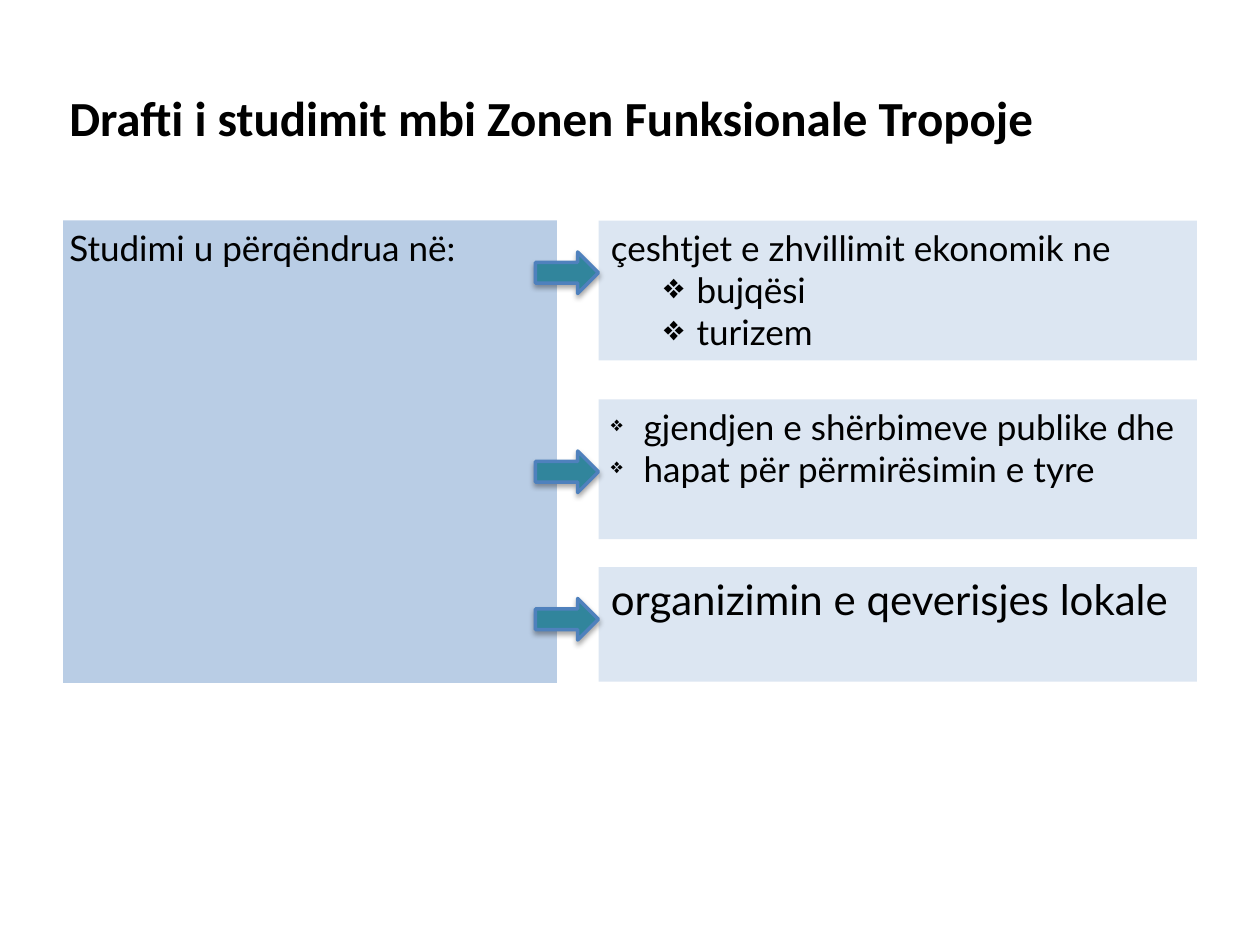
from dataclasses import dataclass

from lxml import etree
from pptx import Presentation
from pptx.dml.color import RGBColor
from pptx.enum.shapes import MSO_SHAPE
from pptx.enum.text import MSO_ANCHOR, MSO_AUTO_SIZE, PP_ALIGN
from pptx.oxml.ns import qn
from pptx.util import Inches, Pt

RECTANGLE = MSO_SHAPE.RECTANGLE
RIGHT_ARROW = MSO_SHAPE.RIGHT_ARROW
TOP, MIDDLE = MSO_ANCHOR.TOP, MSO_ANCHOR.MIDDLE
FIXED, GROW = MSO_AUTO_SIZE.NONE, MSO_AUTO_SIZE.SHAPE_TO_FIT_TEXT
LEFT, JUSTIFY = PP_ALIGN.LEFT, PP_ALIGN.JUSTIFY

COLORS = {
    "text": "000000",
    "focus": "B9CDE5",
    "topic": "DCE6F2",
    "arrow": "31859C",
    "arrow_line": "4F81BD",
}
HANGING = 0.26
TOPIC_LEFT, TOPIC_WIDTH = 4.75, 4.75
ARROW_WIDTH, ARROW_HEIGHT = 0.5, 0.33


@dataclass
class Line:
    text: str
    size: int = 20
    align: PP_ALIGN = LEFT
    font: str = "Lato"
    bold: bool = False
    level: int = 0
    indent: float = 0
    bullet_percent: int = 0


@dataclass
class Topic:
    top: float
    height: float
    arrow_top: float
    lines: list[Line]


TOPICS = [
    Topic(1.75, 1.11, 2, [
        Line("çeshtjet e zhvillimit ekonomik ne"),
        Line("bujqësi", level=1, indent=0.68, bullet_percent=100),
        Line("turizem", level=1, indent=0.68, bullet_percent=100),
    ]),
    Topic(3.17, 1.11, 3.58, [
        Line("gjendjen e shërbimeve publike dhe", indent=HANGING, bullet_percent=60),
        Line("hapat për përmirësimin e tyre", indent=HANGING, bullet_percent=60),
    ]),
    Topic(4.5, 0.91, 4.75, [
        Line("organizimin e qeverisjes lokale", size=24, align=JUSTIFY),
    ]),
]


def color(name: str) -> RGBColor:
    return RGBColor.from_string(COLORS[name])


def set_values(target, values: dict) -> None:
    for name, value in values.items():
        setattr(target, name, value)


def add_bullet(paragraph, line: Line) -> None:
    properties = paragraph._p.get_or_add_pPr()
    properties.set("marL", str(Inches(line.indent)))
    properties.set("indent", str(-Inches(HANGING)))
    size = etree.SubElement(properties, qn("a:buSzPct"))
    size.set("val", str(line.bullet_percent * 1000))
    etree.SubElement(properties, qn("a:buChar")).set("char", "❖")


def write_lines(shape, lines: list[Line], side_margin: float, anchor, auto_size) -> None:
    frame = shape.text_frame
    set_values(frame, {
        "word_wrap": True,
        "auto_size": auto_size,
        "vertical_anchor": anchor,
        "margin_left": Inches(side_margin),
        "margin_right": Inches(side_margin),
        "margin_top": Inches(0.05),
        "margin_bottom": Inches(0.05),
    })
    for index, line in enumerate(lines):
        paragraph = frame.add_paragraph() if index else frame.paragraphs[0]
        set_values(paragraph, {"alignment": line.align, "level": line.level})
        if line.bullet_percent:
            add_bullet(paragraph, line)
        run = paragraph.add_run()
        run.text = line.text
        set_values(run.font, {"name": line.font, "size": Pt(line.size), "bold": line.bold})
        run.font.color.rgb = color("text")


def add_filled(slide, kind, box: tuple, fill: str):
    shape = slide.shapes.add_shape(kind, *map(Inches, box))
    shape.shadow.inherit = False
    shape.fill.solid()
    shape.fill.fore_color.rgb = color(fill)
    shape.line.fill.background()
    return shape


def add_arrow(slide, top: float) -> None:
    box = (TOPIC_LEFT - ARROW_WIDTH, top, ARROW_WIDTH, ARROW_HEIGHT)
    arrow = add_filled(slide, RIGHT_ARROW, box, "arrow")
    arrow.line.color.rgb = color("arrow_line")
    arrow.line.width = Pt(2)
    effects = arrow._element.spPr.find(qn("a:effectLst"))
    shadow = etree.SubElement(effects, qn("a:outerShdw"), {
        "blurRad": str(Pt(3)), "dist": str(Pt(1.8)), "dir": "5400000", "rotWithShape": "0",
    })
    shade = etree.SubElement(shadow, qn("a:srgbClr"), {"val": COLORS["text"]})
    etree.SubElement(shade, qn("a:alpha"), {"val": "35000"})


def add_topic(slide, topic: Topic) -> None:
    box = (TOPIC_LEFT, topic.top, TOPIC_WIDTH, topic.height)
    panel = add_filled(slide, RECTANGLE, box, "topic")
    write_lines(panel, topic.lines, 0.1, TOP, GROW)
    add_arrow(slide, topic.arrow_top)


def main() -> None:
    presentation = Presentation()
    set_values(presentation, {"slide_width": Inches(10), "slide_height": Inches(7.5)})
    slide = presentation.slides.add_slide(presentation.slide_layouts[5])

    title = slide.shapes.title
    set_values(title, {
        "left": Inches(0.5), "top": Inches(0.1), "width": Inches(9), "height": Inches(1.65),
    })
    heading = Line("Drafti i studimit mbi Zonen Funksionale Tropoje",
                   size=28, align=JUSTIFY, font="Calibri", bold=True)
    write_lines(title, [heading], 0.05, MIDDLE, FIXED)

    focus = add_filled(slide, RECTANGLE, (0.5, 1.75, 3.92, 3.67), "focus")
    write_lines(focus, [Line("Studimi u përqëndrua në:", align=JUSTIFY)], 0.05, TOP, FIXED)

    for topic in TOPICS:
        add_topic(slide, topic)
    presentation.save("out.pptx")


if __name__ == "__main__":
    main()
